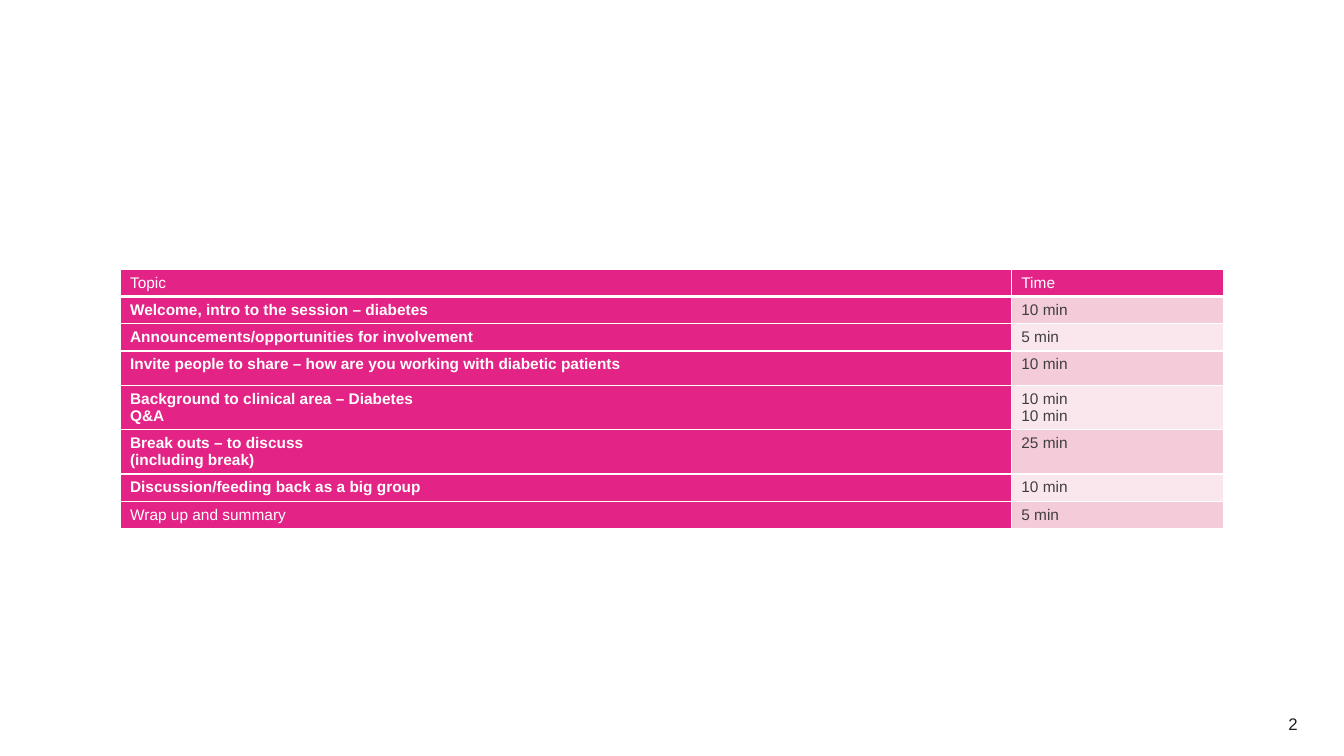
from lxml import etree
from pptx import Presentation
from pptx import util as u
from pptx.dml import color
from pptx.enum import text
from pptx.oxml import ns

WHITE, PINK, ROSE, BLUSH, GREY, INK = "FFFFFF", "E32486", "F4CBD8", "FAE7ED", "3F3F3F", "1F1F1F"
ONE_LINE, SPACED, TWO_LINES = 0.27, 0.34, 0.44

agenda = [
    (["Topic"], ["Time"], ONE_LINE, False),
    (["Welcome, intro to the session – diabetes"], ["10 min"], ONE_LINE, True),
    (["Announcements/opportunities for involvement"], ["5 min"], ONE_LINE, True),
    (["Invite people to share – how are you working with diabetic patients"], ["10 min"], SPACED, True),
    (["Background to clinical area – Diabetes", "Q&A"], ["10 min", "10 min"], TWO_LINES, True),
    (["Break outs – to discuss", "(including break)"], ["25 min"], TWO_LINES, True),
    (["Discussion/feeding back as a big group"], ["10 min"], ONE_LINE, True),
    (["Wrap up and summary"], ["5 min"], ONE_LINE, False),
]


def rgb(value):
    return color.RGBColor.from_string(value)


def write(frame, lines, size, ink, bold=False, align=text.PP_ALIGN.LEFT):
    for index, line in enumerate(lines):
        paragraph = frame.add_paragraph() if index else frame.paragraphs[0]
        paragraph.alignment = align
        run = paragraph.add_run()
        run.text = line
        run.font.name = "Arial"
        run.font.size = u.Pt(size)
        run.font.bold = bold
        run.font.color.rgb = rgb(ink)


deck = Presentation()
deck.slide_width, deck.slide_height = u.Inches(13.33), u.Inches(7.5)
slide = deck.slides.add_slide(deck.slide_layouts[6])

column_widths = [8.84, 2.11]
schedule = slide.shapes.add_table(
    len(agenda), len(column_widths), u.Inches(1.19), u.Inches(2.67),
    u.Inches(sum(column_widths)), u.Inches(sum(row[2] for row in agenda))).table
for column, width in zip(schedule.columns, column_widths):
    column.width = u.Inches(width)

for row, (topic, time, height, bold) in enumerate(agenda):
    schedule.rows[row].height = u.Inches(height)
    for column, lines in enumerate((topic, time)):
        cell = schedule.cell(row, column)
        on_pink = row == 0 or column == 0
        fill = PINK if on_pink else ROSE if row % 2 else BLUSH
        cell.fill.solid()
        cell.fill.fore_color.rgb = rgb(fill)
        write(cell.text_frame, lines, 11, WHITE if on_pink else GREY, bold and column == 0)

        properties = cell._tc.get_or_add_tcPr()
        for position, side in enumerate("LRTB"):
            heavy = (row, side) in ((0, "B"), (1, "T"))
            border = etree.Element(ns.qn("a:ln" + side), w=str(u.Pt(3 if heavy else 1)))
            paint = etree.SubElement(border, ns.qn("a:solidFill"))
            etree.SubElement(paint, ns.qn("a:srgbClr"), val=WHITE)
            properties.insert(position, border)

page_number = slide.shapes.add_textbox(
    u.Inches(9.86), u.Inches(6.98), u.Inches(3.11), u.Inches(0.4)).text_frame
page_number.word_wrap = True
page_number.vertical_anchor = text.MSO_ANCHOR.MIDDLE
write(page_number, ["2"], 12, INK, align=text.PP_ALIGN.RIGHT)

deck.save("out.pptx")
